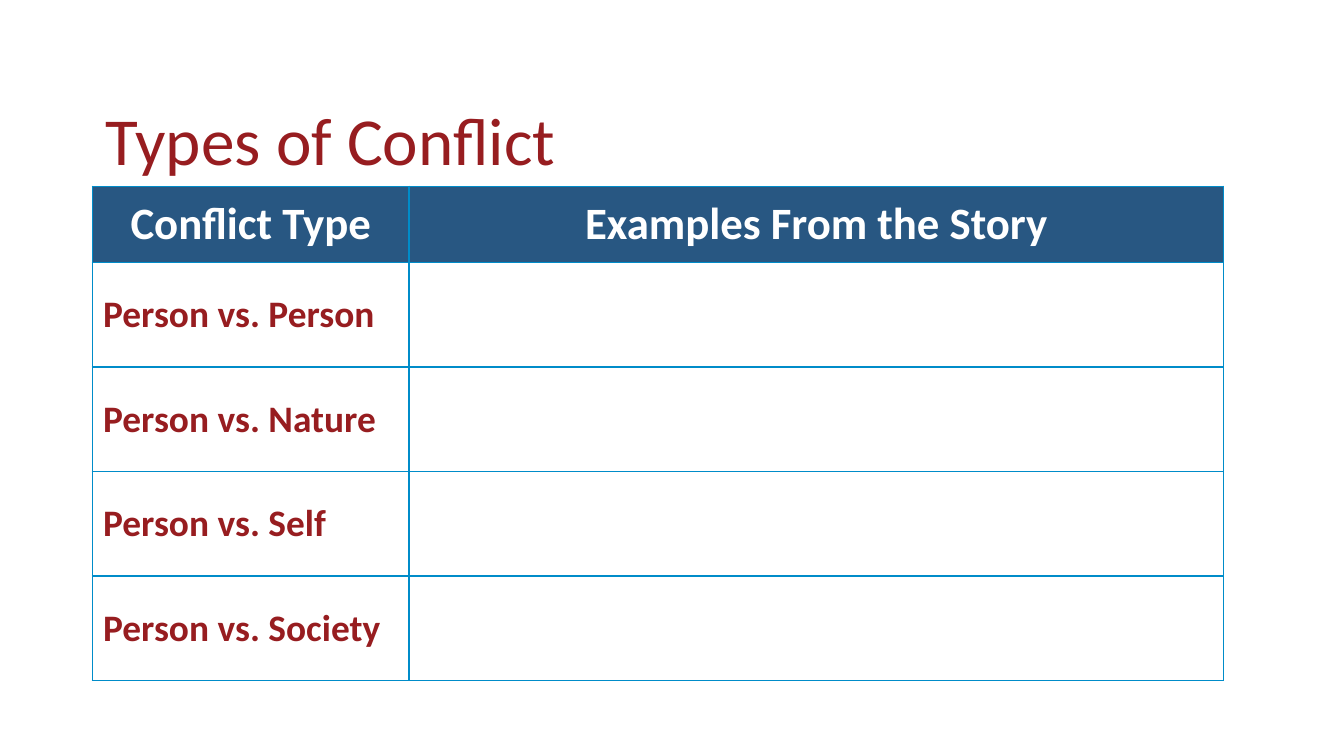
from dataclasses import dataclass

from lxml import etree
from pptx import Presentation
from pptx.dml.color import RGBColor
from pptx.enum import text
from pptx.oxml.ns import qn
from pptx.util import Pt


@dataclass(frozen=True)
class Theme:
    font: str = "Calibri"
    red: str = "971D20"
    navy: str = "285782"
    white: str = "FFFFFF"
    border: str = "008CC9"
    title_size: int = 36
    header_size: int = 24
    label_size: int = 20


THEME = Theme()
HEADINGS = ["Conflict Type", "Examples From the Story"]
OPPONENTS = ["Person", "Nature", "Self", "Society"]


def style_text(frame, size, color, bold, align):
    for paragraph in frame.paragraphs:
        paragraph.alignment = align
        for run in paragraph.runs:
            run.font.name = THEME.font
            run.font.size = Pt(size)
            run.font.bold = bold
            run.font.color.rgb = RGBColor.from_string(color)


def add_borders(cell):
    properties = cell._tc.get_or_add_tcPr()
    for position, side in enumerate(("lnL", "lnR", "lnT", "lnB")):
        line = etree.Element(qn(f"a:{side}"), w=str(Pt(1)))
        fill = etree.SubElement(line, qn("a:solidFill"))
        etree.SubElement(fill, qn("a:srgbClr"), val=THEME.border)
        properties.insert(position, line)


def fill_cell(cell, wording, size, color, background, align, anchor):
    cell.margin_left = cell.margin_right = Pt(5.76)
    cell.margin_top = cell.margin_bottom = Pt(5.76)
    cell.vertical_anchor = anchor
    cell.fill.solid()
    cell.fill.fore_color.rgb = RGBColor.from_string(background)
    add_borders(cell)
    if wording:
        cell.text_frame.text = wording
        style_text(cell.text_frame, size, color, True, align)


def place_title(slide, left, top, width, height):
    title = slide.shapes.title
    title.left, title.top, title.width, title.height = left, top, width, height
    frame = title.text_frame
    frame.text = "Types of Conflict"
    frame.word_wrap = True
    frame.auto_size = text.MSO_AUTO_SIZE.NONE
    frame.vertical_anchor = text.MSO_ANCHOR.BOTTOM
    frame.paragraphs[0].line_spacing = 0.9
    style_text(frame, THEME.title_size, THEME.red, False, text.PP_ALIGN.LEFT)


def place_conflict_table(slide, left, top, width, height):
    header_height, type_width = Pt(40.7), Pt(169.7)
    table = slide.shapes.add_table(
        len(OPPONENTS) + 1, len(HEADINGS), left, top, width, height).table
    table.horz_banding = False
    table.columns[0].width = type_width
    table.columns[1].width = width - type_width
    table.rows[0].height = header_height

    for column, heading in enumerate(HEADINGS):
        fill_cell(table.cell(0, column), heading, THEME.header_size, THEME.white,
                  THEME.navy, text.PP_ALIGN.CENTER, text.MSO_ANCHOR.TOP)
    for row, opponent in enumerate(OPPONENTS, start=1):
        table.rows[row].height = (height - header_height) // len(OPPONENTS)
        for column, wording in enumerate((f"Person vs. {opponent}", "")):
            fill_cell(table.cell(row, column), wording, THEME.label_size, THEME.red,
                      THEME.white, text.PP_ALIGN.LEFT, text.MSO_ANCHOR.MIDDLE)


def main():
    deck = Presentation()
    deck.slide_width, deck.slide_height = Pt(720), Pt(405)
    slide = deck.slides.add_slide(deck.slide_layouts[5])
    place_title(slide, Pt(49.5), Pt(21.6), Pt(621), Pt(78.3))
    place_conflict_table(slide, Pt(49.5), Pt(99.9), Pt(606), Pt(264.7))
    deck.save("out.pptx")


if __name__ == "__main__":
    main()
